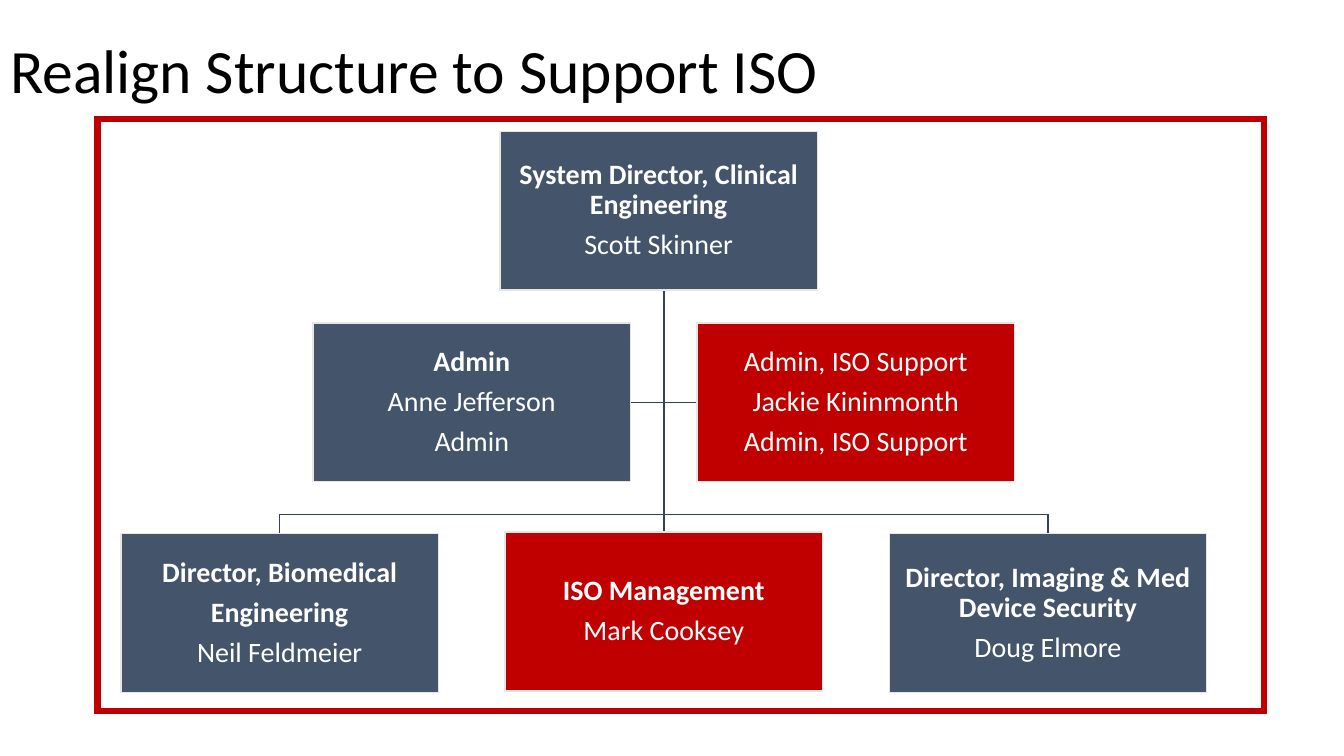
from dataclasses import dataclass

from lxml import etree
from pptx import Presentation
from pptx.dml.color import RGBColor
from pptx.enum import shapes, text
from pptx.oxml.ns import qn
from pptx.util import Cm, Pt

TITLE = "Realign Structure to Support ISO"

TRUNK_X, COLUMN_STEP = 16.73, 9.68
STAFF_TOP, DIRECTOR_TOP = 8.14, 13.45
POSITIONS = [
    (16.6, 3.31, "slate", ["System Director, Clinical Engineering"], ["Scott Skinner"]),
    (TRUNK_X - COLUMN_STEP, DIRECTOR_TOP, "slate",
     ["Director, Biomedical", "Engineering"], ["Neil Feldmeier"]),
    (TRUNK_X, 13.41, "red", ["ISO Management"], ["Mark Cooksey"]),
    (TRUNK_X + COLUMN_STEP, DIRECTOR_TOP, "slate",
     ["Director, Imaging & Med Device Security"], ["Doug Elmore"]),
    (TRUNK_X - COLUMN_STEP / 2, STAFF_TOP, "slate", ["Admin"], ["Anne Jefferson", "Admin"]),
    (TRUNK_X + COLUMN_STEP / 2, STAFF_TOP, "red", [],
     ["Admin, ISO Support", "Jackie Kininmonth", "Admin, ISO Support"]),
]
BOX_WIDTH, BOX_HEIGHT, BOX_INSET = 8.0, 4.0, 0.03
TRUNK_TOP, TRUNK_BOTTOM, BUS_Y = 6.45, 13.77, 12.97
DROP_BOTTOM = 13.81
FRAME = (2.46, 3.0, 29.39, 14.91)


@dataclass(frozen=True)
class Theme:
    font: str = "Calibri"
    title_size: int = 44
    box_size: int = 20
    black: str = "000000"
    white: str = "FFFFFF"
    slate: str = "44546A"
    red: str = "C00000"
    border: str = "E7E6E6"
    connector: str = "364355"


THEME = Theme()


def set_font(font, size, color, bold=False):
    font.name, font.size, font.bold = THEME.font, Pt(size), bold
    font.color.rgb = RGBColor.from_string(color)


def set_line(shape, color, width):
    shape.line.color.rgb = RGBColor.from_string(color)
    shape.line.width = Pt(width)
    outline = shape.line._get_or_add_ln()
    etree.SubElement(outline, qn("a:miter"), lim="800000")


def add_title(slide):
    title = slide.shapes.title
    title.left, title.top, title.width, title.height = Cm(0), Cm(0.02), Cm(29.21), Cm(3.68)
    title.text_frame.text = TITLE
    title.text_frame.vertical_anchor = text.MSO_ANCHOR.MIDDLE
    paragraph = title.text_frame.paragraphs[0]
    paragraph.alignment = text.PP_ALIGN.LEFT
    paragraph.line_spacing = 0.9
    set_font(paragraph.runs[0].font, THEME.title_size, THEME.black)


def add_rectangle(slide, left, top, width, height):
    shape = slide.shapes.add_shape(
        shapes.MSO_SHAPE.RECTANGLE, Cm(left), Cm(top), Cm(width), Cm(height))
    shape.shadow.inherit = False
    return shape


def add_branches(slide):
    staff_y = STAFF_TOP + BOX_HEIGHT / 2
    staff_reach = (COLUMN_STEP - BOX_WIDTH) / 2
    staff = [[(TRUNK_X, staff_y), (TRUNK_X + side * staff_reach, staff_y)]
             for side in (1, -1)]
    directors = [[(TRUNK_X, BUS_Y), (TRUNK_X + side * COLUMN_STEP, BUS_Y),
                  (TRUNK_X + side * COLUMN_STEP, DROP_BOTTOM)] for side in (1, -1)]
    trunk = [(TRUNK_X, TRUNK_BOTTOM)]
    for points in [*staff, *directors, trunk]:
        builder = slide.shapes.build_freeform(Cm(TRUNK_X), Cm(TRUNK_TOP))
        builder.add_line_segments([(Cm(x), Cm(y)) for x, y in points], close=False)
        branch = builder.convert_to_shape()
        branch.shadow.inherit = False
        branch.fill.background()
        set_line(branch, THEME.connector, 1)


def add_position(slide, center_x, top, fill, bold_lines, plain_lines):
    box = add_rectangle(slide, center_x - BOX_WIDTH / 2, top, BOX_WIDTH, BOX_HEIGHT)
    box.fill.solid()
    box.fill.fore_color.rgb = RGBColor.from_string(getattr(THEME, fill))
    set_line(box, THEME.border, 1)
    frame = box.text_frame
    frame.word_wrap = True
    frame.vertical_anchor = text.MSO_ANCHOR.MIDDLE
    frame.margin_left = frame.margin_right = Cm(BOX_INSET)
    frame.margin_top = frame.margin_bottom = Cm(BOX_INSET)
    frame.text = "\n".join(bold_lines + plain_lines)
    for index, paragraph in enumerate(frame.paragraphs):
        paragraph.alignment = text.PP_ALIGN.CENTER
        paragraph.line_spacing = 0.9
        paragraph.space_after = Pt(7)
        set_font(paragraph.runs[0].font, THEME.box_size, THEME.white,
                 index < len(bold_lines))


def main():
    presentation = Presentation()
    presentation.slide_width, presentation.slide_height = Cm(33.87), Cm(19.05)
    slide = presentation.slides.add_slide(presentation.slide_layouts[5])
    add_title(slide)
    add_branches(slide)
    for position in POSITIONS:
        add_position(slide, *position)
    frame = add_rectangle(slide, *FRAME)
    frame.fill.background()
    set_line(frame, THEME.red, 4.5)
    presentation.save("out.pptx")


if __name__ == "__main__":
    main()
